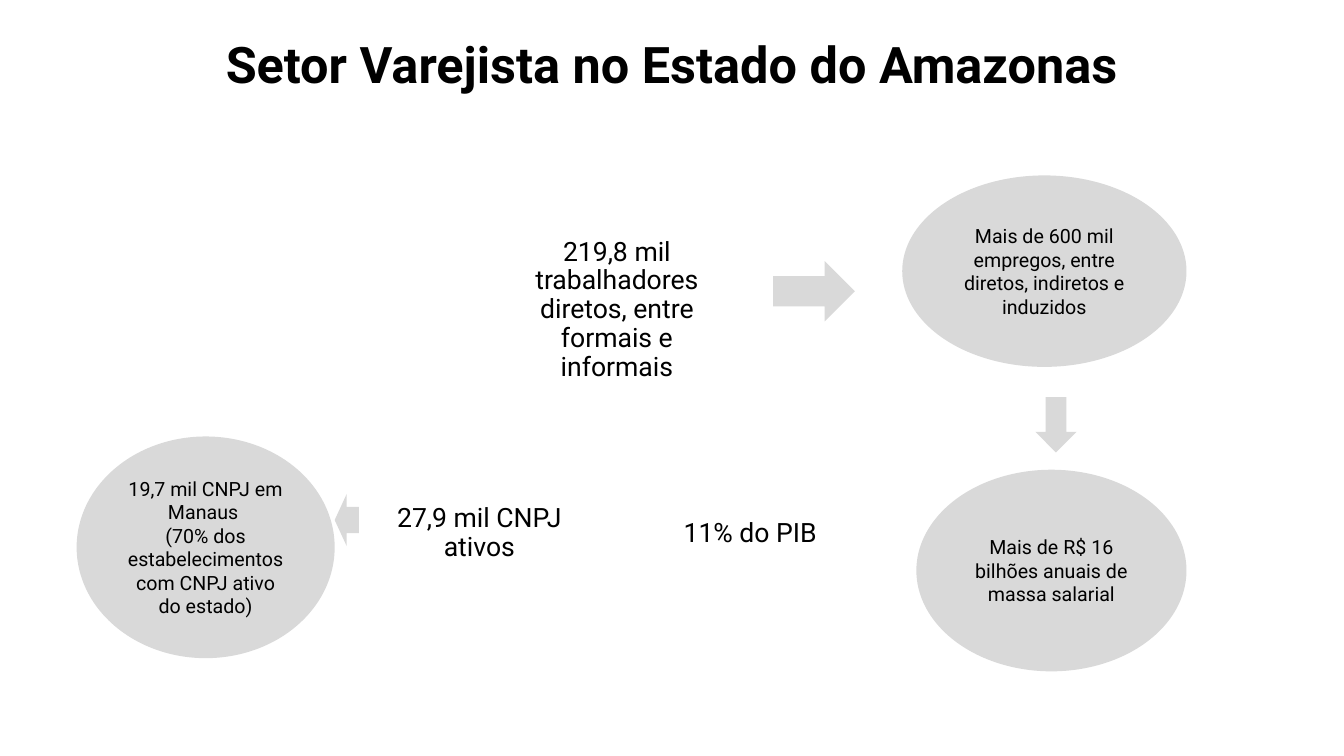
from pptx import Presentation, util as u
from pptx.dml.color import RGBColor
from pptx.enum import shapes, text

COLORS = {"ink": "000000", "gray": "D9D9D9"}
KIND = shapes.MSO_SHAPE


def write(frame, words, size=14, bold=False, lead=None, inset=None):
    """Fill a text frame with centred text, one paragraph per line."""
    frame.word_wrap = True
    frame.vertical_anchor = text.MSO_ANCHOR.MIDDLE
    if inset is not None:
        frame.margin_left = frame.margin_right = u.Inches(inset)
        frame.margin_top = frame.margin_bottom = u.Inches(inset)
    for i, line in enumerate(words.split("\n")):
        par = frame.paragraphs[0] if i == 0 else frame.add_paragraph()
        par.alignment = text.PP_ALIGN.CENTER
        if lead:
            par.line_spacing = lead
        run = par.add_run()
        run.text = line
        font = run.font
        font.name, font.size, font.bold = "Roboto", u.Pt(size), bold
        font.color.rgb = RGBColor.from_string(COLORS["ink"])


class Board:
    """Current slide and its style; boxes are percent shares of its size."""

    def __init__(self, deck):
        self.size = deck.slide_width, deck.slide_height
        self.slide = deck.slides.add_slide(deck.slide_layouts[6])

    def place(self, box):
        return [round(part * side / 100)
                for part, side in zip(box, self.size * 2)]

    def label(self, box, words, **style):
        item = self.slide.shapes.add_textbox(*self.place(box))
        write(item.text_frame, words, lead=0.9, **style)

    def shape(self, kind, box):
        item = self.slide.shapes.add_shape(kind, *self.place(box))
        item.shadow.inherit = False
        item.fill.solid()
        item.fill.fore_color.rgb = RGBColor.from_string(COLORS["gray"])
        item.line.fill.background()
        return item

    def bubble(self, box, words):
        write(self.shape(KIND.OVAL, box).text_frame, words)


def main():
    deck = Presentation()
    deck.slide_width, deck.slide_height = u.Inches(13.33), u.Inches(7.5)
    board = Board(deck)

    board.label((2.63, 2.13, 94.73, 13.6),
                "Setor Varejista no Estado do Amazonas", size=36, bold=True)

    facts = [
        ((37.88, 32.27, 16.05, 17.47),
         "219,8 mil trabalhadores diretos, entre formais e informais"),
        ((49.5, 59.87, 13.13, 21.47), "11% do PIB "),
        ((29.1, 59.87, 13.13, 21.47), "27,9 mil CNPJ ativos"),
    ]
    for box, words in facts:
        board.label(box, words, size=19, inset=0)

    bubbles = [
        ((67.13, 23.2, 21.15, 25.33),
         "Mais de 600 mil empregos, entre diretos, indiretos e induzidos"),
        ((68.18, 62.13, 20.1, 26.67),
         "Mais de R$ 16 bilhões anuais de massa salarial"),
        ((5.7, 57.73, 19.2, 29.33),
         "19,7 mil CNPJ em Manaus \n"
         "(70% dos estabelecimentos com CNPJ ativo do estado)"),
    ]
    for box, words in bubbles:
        board.bubble(box, words)

    arrows = [
        (KIND.RIGHT_ARROW, (57.53, 34.53, 6.08, 8)),
        (KIND.DOWN_ARROW, (77.03, 52.53, 3.08, 7.33)),
        (KIND.LEFT_ARROW, (24.9, 65.33, 1.8, 6.93)),
    ]
    for kind, box in arrows:
        board.shape(kind, box)

    deck.save("out.pptx")


if __name__ == "__main__":
    main()
